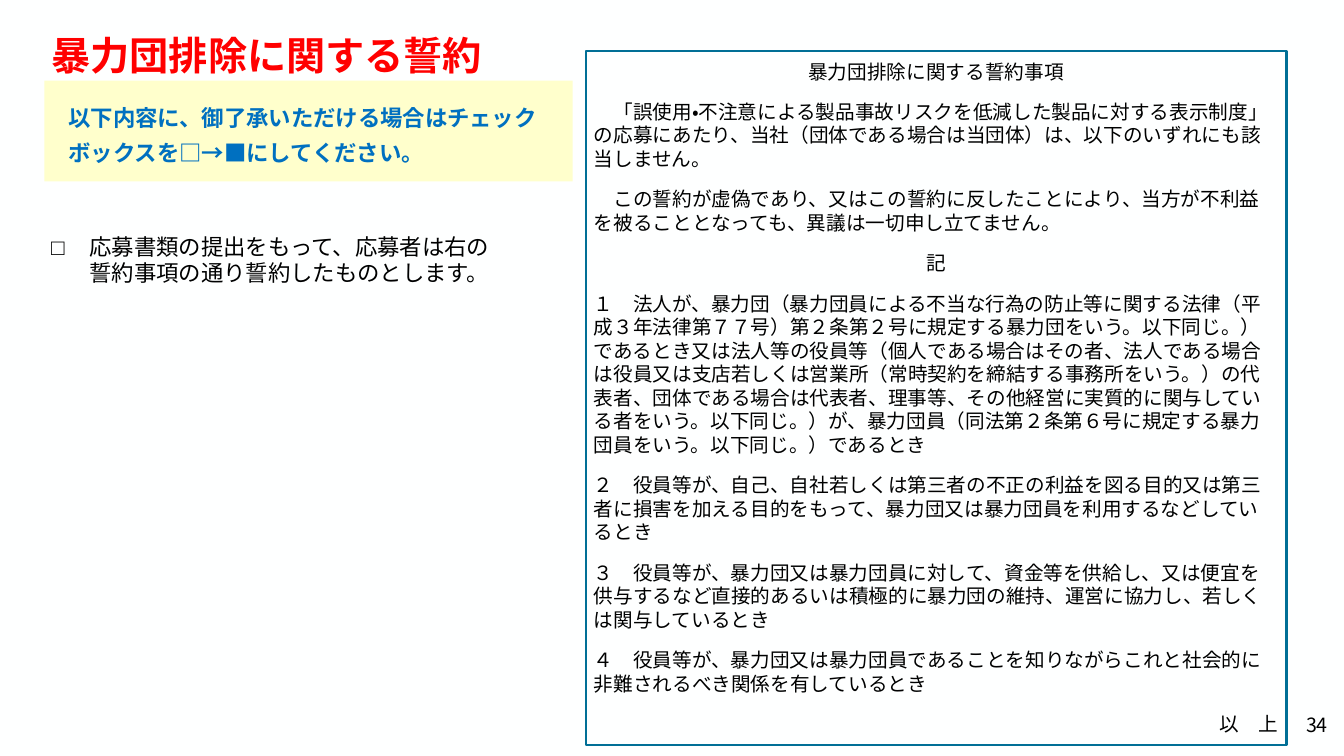
from pptx import Presentation
from pptx.dml.color import RGBColor
from pptx.enum.lang import MSO_LANGUAGE_ID
from pptx.enum.shapes import MSO_SHAPE
from pptx.enum.text import MSO_ANCHOR, MSO_AUTO_SIZE, PP_ALIGN
from pptx.util import Inches, Pt

PAPER = RGBColor(0xFE, 0xFF, 0xFF)
BLACK = RGBColor(0, 0, 0)
RED = RGBColor(0xFF, 0, 0)
BLUE = RGBColor(0x00, 0x70, 0xC0)
TEAL = RGBColor(0x01, 0x6F, 0x96)
CREAM = RGBColor(0xFF, 0xFF, 0xCC)
LEFT, CENTER, RIGHT = PP_ALIGN.LEFT, PP_ALIGN.CENTER, PP_ALIGN.RIGHT

LEFT_EDGE = 0.41
PLEDGE_LEFT, PLEDGE_WIDTH = 5.81, 6.95
PLEDGE_RIGHT = PLEDGE_LEFT + PLEDGE_WIDTH
CHECK_TOP = 2.26

PLEDGE = [
    ("暴力団排除に関する誓約事項", CENTER),
    ("　「誤使用・不注意による製品事故リスクを低減した製品に対する表示制度」の応募にあたり、"
     "当社（団体である場合は当団体）は、以下のいずれにも該当しません。", LEFT),
    ("　この誓約が虚偽であり、又はこの誓約に反したことにより、当方が不利益を被ることとなっても、"
     "異議は一切申し立てません。", LEFT),
    ("記", CENTER),
    ("１　法人が、暴力団（暴力団員による不当な行為の防止等に関する法律（平成３年法律第７７号）"
     "第２条第２号に規定する暴力団をいう。以下同じ。）であるとき又は法人等の役員等"
     "（個人である場合はその者、法人である場合は役員又は支店若しくは営業所"
     "（常時契約を締結する事務所をいう。）の代表者、団体である場合は代表者、理事等、"
     "その他経営に実質的に関与している者をいう。以下同じ。）が、暴力団員"
     "（同法第２条第６号に規定する暴力団員をいう。以下同じ。）であるとき", LEFT),
    ("２　役員等が、自己、自社若しくは第三者の不正の利益を図る目的又は第三者に損害を加える目的をもって、"
     "暴力団又は暴力団員を利用するなどしているとき", LEFT),
    ("３　役員等が、暴力団又は暴力団員に対して、資金等を供給し、又は便宜を供与するなど"
     "直接的あるいは積極的に暴力団の維持、運営に協力し、若しくは関与しているとき", LEFT),
    ("４　役員等が、暴力団又は暴力団員であることを知りながらこれと社会的に"
     "非難されるべき関係を有しているとき", LEFT),
    ("以　上", RIGHT),
]


def write(shape, paragraphs, size=16, color=BLACK, bold=False, font="Arial",
          insets=(0.1, 0.05, 0.1, 0.05), anchor=MSO_ANCHOR.TOP, wrap=True,
          gap=0, line_spacing=None):
    """Fill a shape with (text, alignment) paragraphs; gap is points on each side."""
    frame = shape.text_frame
    frame.auto_size = MSO_AUTO_SIZE.NONE
    frame.word_wrap = wrap
    frame.vertical_anchor = anchor
    (frame.margin_left, frame.margin_top,
     frame.margin_right, frame.margin_bottom) = map(Inches, insets)
    for index, (text, alignment) in enumerate(paragraphs):
        paragraph = frame.paragraphs[0] if index == 0 else frame.add_paragraph()
        paragraph.alignment = alignment
        paragraph.space_before = Pt(gap if index else 0)
        paragraph.space_after = Pt(gap)
        if line_spacing:
            paragraph.line_spacing = line_spacing
        run = paragraph.add_run()
        run.text = text
        run.font.name = font
        run.font.size = Pt(size)
        run.font.bold = bold
        run.font.color.rgb = color
        run.font.language_id = MSO_LANGUAGE_ID.JAPANESE


def box(left, top, width, height):
    return [Inches(length) for length in (left, top, width, height)]


prs = Presentation()
prs.slide_width, prs.slide_height = Inches(13.33), Inches(7.5)
slide = prs.slides.add_slide(prs.slide_layouts[5])
slide.background.fill.solid()
slide.background.fill.fore_color.rgb = PAPER
shapes = slide.shapes

title = shapes.title
title.left, title.top, title.width, title.height = box(LEFT_EDGE, 0.26, 4.52, 0.57)
write(title, [("暴力団排除に関する誓約", LEFT)], size=28, color=RED, bold=True, wrap=False)

page_number = shapes.add_textbox(*box(PLEDGE_RIGHT, 7.04, 0.57, 0.46))
write(page_number, [("34", RIGHT)], size=14, font="Noto Sans CJK JP",
      insets=(0, 0, 0.16, 0.16), anchor=MSO_ANCHOR.MIDDLE, wrap=False)

pledge = shapes.add_shape(MSO_SHAPE.RECTANGLE, *box(PLEDGE_LEFT, 0.51, PLEDGE_WIDTH, 6.88))
pledge.shadow.inherit = False
pledge.fill.background()
pledge.line.color.rgb = TEAL
pledge.line.width = Pt(1.5)
write(pledge, PLEDGE, size=14, insets=(0.08, 0.08, 0.08, 0.04), gap=6)

notice = shapes.add_shape(MSO_SHAPE.RECTANGLE, *box(0.44, 0.8, 5.24, 1))
notice.shadow.inherit = False
notice.fill.solid()
notice.fill.fore_color.rgb = CREAM
notice.line.fill.background()
write(notice, [("以下内容に、御了承いただける場合はチェックボックスを□→■にしてください。", LEFT)],
      color=BLUE, bold=True, insets=(0.24, 0.16, 0.24, 0.16),
      anchor=MSO_ANCHOR.MIDDLE, line_spacing=1.3)

checkbox = shapes.add_textbox(*box(LEFT_EDGE, CHECK_TOP, 0.4, 0.37))
write(checkbox, [("□", LEFT)])
consent = shapes.add_textbox(*box(0.79, CHECK_TOP, 4.37, 0.64))
write(consent, [("応募書類の提出をもって、応募者は右の誓約事項の通り誓約したものとします。", LEFT)])

prs.save("out.pptx")
